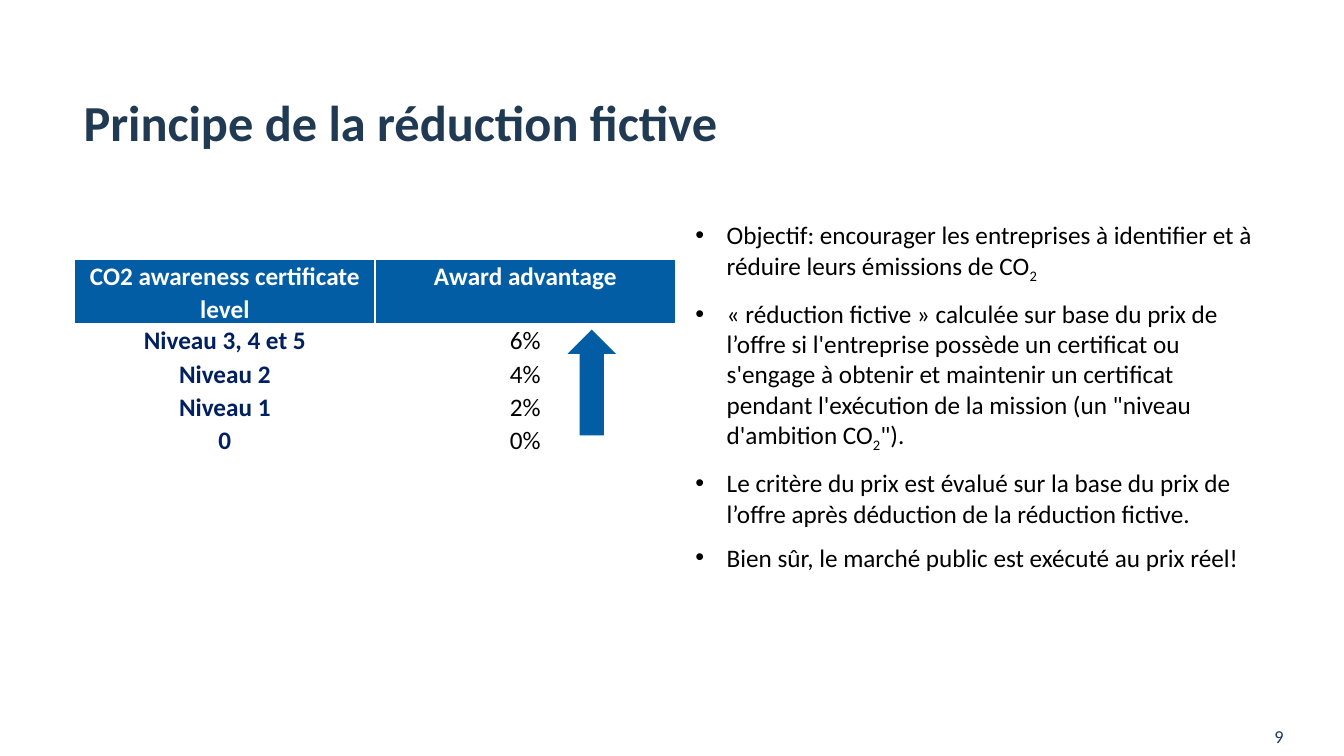
from lxml import etree
from pptx import Presentation
from pptx.dml.color import RGBColor
from pptx.enum.shapes import MSO_SHAPE
from pptx.enum.text import MSO_ANCHOR, PP_ALIGN
from pptx.oxml.ns import qn
from pptx.util import Inches, Pt

DOWN_ARROW = MSO_SHAPE.DOWN_ARROW
MIDDLE = MSO_ANCHOR.MIDDLE
CENTER = PP_ALIGN.CENTER

COLORS = {
    "navy": "213A53",
    "blue": "025DA4",
    "level": "002060",
    "black": "000000",
    "white": "FFFFFF",
}


def set_font(paragraph, size, color, bold=False):
    font = paragraph.font
    font.name = "Calibri"
    font.size = Pt(size)
    font.bold = bold
    font.color.rgb = RGBColor.from_string(COLORS[color])


def add_text_frame(left, top, width, height):
    box = slide.shapes.add_textbox(Inches(left), Inches(top), Inches(width), Inches(height))
    box.text_frame.word_wrap = True
    return box.text_frame


prs = Presentation()
prs.slide_width = Inches(13.33)
prs.slide_height = Inches(7.5)
slide = prs.slides.add_slide(prs.slide_layouts[6])

# Explanations; each point alternates normal and subscript text
points = [
    ["Objectif: encourager les entreprises à identifier et à réduire leurs émissions de CO", "2"],
    ["« réduction fictive » calculée sur base du prix de l’offre si l'entreprise possède "
     "un certificat ou s'engage à obtenir et maintenir un certificat pendant l'exécution "
     "de la mission (un \"niveau d'ambition CO", "2", "\")."],
    ["Le critère du prix est évalué sur la base du prix de l’offre après déduction "
     "de la réduction fictive."],
    ["Bien sûr, le marché public est exécuté au prix réel!"],
]
explanations = add_text_frame(6.8, 2.13, 5.74, 3.92)
for i, parts in enumerate(points):
    point = explanations.add_paragraph() if i else explanations.paragraphs[0]
    properties = point._p.get_or_add_pPr()
    properties.set("marL", str(Inches(0.31)))
    properties.set("indent", str(-Inches(0.31)))
    etree.SubElement(properties, qn("a:buFont")).set("typeface", "Arial")
    etree.SubElement(properties, qn("a:buChar")).set("char", "•")
    if i:
        point.space_before = Pt(10)
    set_font(point, 18, "black")
    for j, part in enumerate(parts):
        run = point.add_run()
        run.text = part
        if j % 2:
            run.font._element.set("baseline", "-25000")

# Page number
page_number = add_text_frame(12.54, 7.1, 0.62, 0.4)
page_number.vertical_anchor = MIDDLE
page_number.text = "9"
set_font(page_number.paragraphs[0], 13, "navy")

# Title
title = add_text_frame(0.73, 0.92, 11.88, 0.52)
title.text = "Principe de la réduction fictive"
title.paragraphs[0].line_spacing = 0.9
set_font(title.paragraphs[0], 36, "navy", bold=True)

# Advantage by certificate level
advantages = [
    ("CO2 awareness certificate level", "Award advantage"),
    ("Niveau 3, 4 et 5", "6%"),
    ("Niveau 2", "4%"),
    ("Niveau 1", "2%"),
    ("0", "0%"),
]
table = slide.shapes.add_table(
    len(advantages), 2, Inches(0.74), Inches(2.57), Inches(5.96), Inches(1.96)
).table
table.horz_banding = False
for r, row in enumerate(advantages):
    table.rows[r].height = Inches(0.33 if r else 0.64)
    for c, value in enumerate(row):
        cell = table.cell(r, c)
        cell.margin_left = cell.margin_right = Inches(0.07)
        cell.margin_top = cell.margin_bottom = 0
        cell.text = value
        paragraph = cell.text_frame.paragraphs[0]
        paragraph.alignment = CENTER
        paragraph.line_spacing = 1.07
        if r == 0:
            cell.fill.solid()
            cell.fill.fore_color.rgb = RGBColor.from_string(COLORS["blue"])
            set_font(paragraph, 18, "white", bold=True)
        else:
            cell.fill.background()
            set_font(paragraph, 18, "black" if c else "level", bold=c == 0)

# Arrow towards the higher advantage
arrow = slide.shapes.add_shape(
    DOWN_ARROW, Inches(5.63), Inches(3.27), Inches(0.48), Inches(1.05)
)
arrow.rotation = 180
arrow.shadow.inherit = False
arrow.fill.solid()
arrow.fill.fore_color.rgb = RGBColor.from_string(COLORS["blue"])
arrow.line.fill.background()

prs.save("out.pptx")
